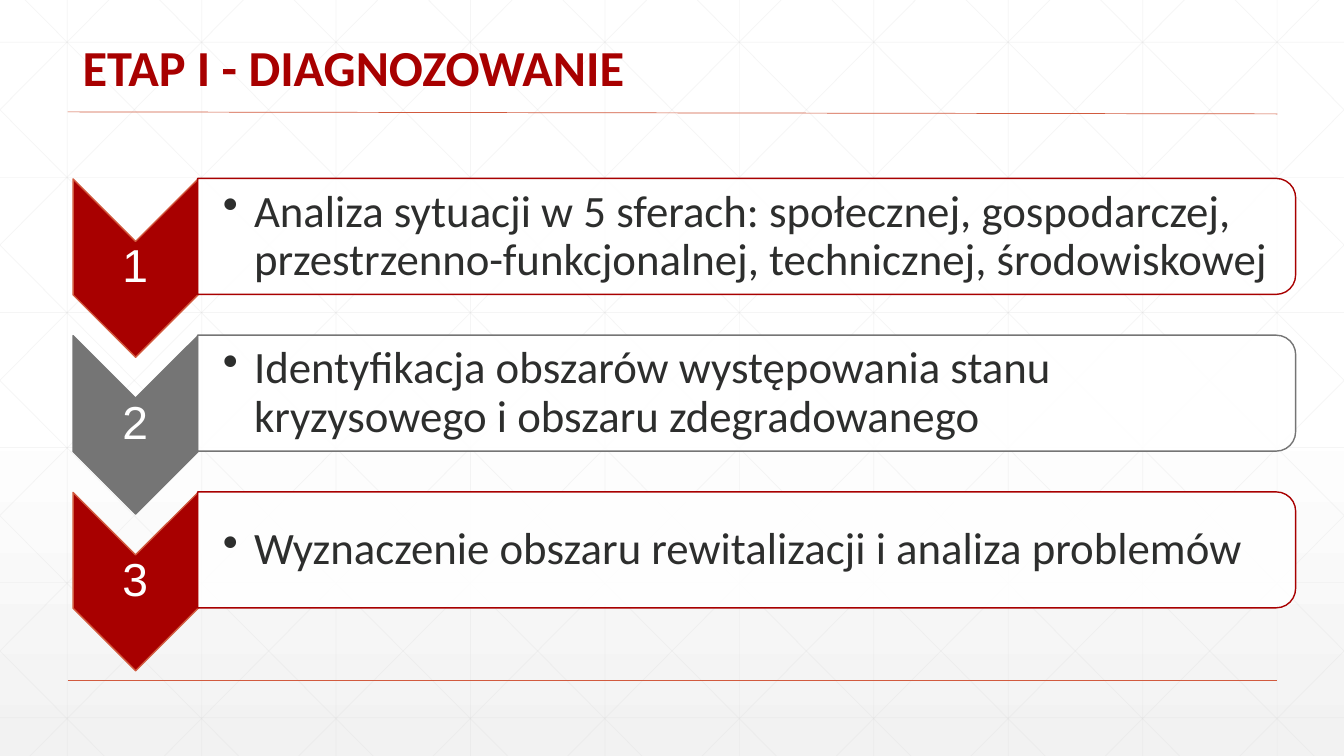
"""Build the slide on the diagnosis stage of a revitalisation programme."""
from dataclasses import dataclass

from lxml import etree
from pptx import Presentation
from pptx import util as u
from pptx.dml import color
from pptx.enum import shapes as kinds
from pptx.enum import text
from pptx.oxml import ns
from pptx.shapes import autoshape, shapetree
from pptx.slide import Slide

WIDTH, HEIGHT = 13.33, 7.5


@dataclass(frozen=True)
class Theme:
    red: str = "A80000"
    orange: str = "D15A3E"
    gray: str = "757575"
    grid: str = "D9D9D9"
    ink: str = "2D2E2D"
    white: str = "FFFFFF"
    shade: str = "F2F2F2"
    heading_font: str = "Calibri"
    number_font: str = "Arial"
    title_size: int = 36
    number_size: int = 33
    body_size: int = 32


@dataclass(frozen=True)
class Rule:
    start: tuple[float, float]
    end: tuple[float, float]
    color: str
    weight: float
    opacity: int = 100


@dataclass(frozen=True)
class Stage:
    number: str
    task: str
    color: str
    chevron_edge: str


THEME = Theme()
STAGES = (
    Stage("1", "Analiza sytuacji w 5 sferach: społecznej, gospodarczej, "
          "przestrzenno-funkcjonalnej, technicznej, środowiskowej", THEME.red, THEME.orange),
    Stage("2", "Identyfikacja obszarów występowania stanu kryzysowego "
          "i obszaru zdegradowanego", THEME.gray, THEME.gray),
    Stage("3", "Wyznaczenie obszaru rewitalizacji i analiza problemów", THEME.red, THEME.orange),
)
TITLE_RULES = (
    Rule((0.67, 6.75), (12.67, 6.75), THEME.orange, 1),
    Rule((0.67, 1.11), (12.67, 1.13), THEME.orange, 0.5),
)


def rgb(value: str) -> color.RGBColor:
    return color.RGBColor.from_string(value)


def set_opacity(element: etree.ElementBase, percent: int) -> None:
    first_color = element.find(".//" + ns.qn("a:srgbClr"))
    etree.SubElement(first_color, ns.qn("a:alpha")).set("val", str(percent * 1000))


def grid_rules() -> list[Rule]:
    step, run = 4 / 3, 7.45
    ends = [((step * (i + 0.5), 0), (step * (i + 0.5), HEIGHT)) for i in range(10)]
    ends += [((0, 0.42 + 1.34 * i), (WIDTH, 0.42 + 1.34 * i)) for i in range(6)]
    for i in range(-5, 10):
        top_x = 0.25 + step * i
        left, right = max(top_x, 0), min(top_x + run, WIDTH)
        upper, lower = [(x - top_x) * HEIGHT / run for x in (left, right)]
        ends.append(((left, upper), (right, lower)))
        ends.append(((WIDTH - left, upper), (WIDTH - right, lower)))
    return [Rule(start, end, THEME.grid, 0.5, 25) for start, end in ends]


def draw_rule(canvas: shapetree.GroupShapes, rule: Rule) -> None:
    points = [u.Inches(v) for v in (*rule.start, *rule.end)]
    line = canvas.add_connector(kinds.MSO_CONNECTOR.STRAIGHT, *points)
    line.line.color.rgb = rgb(rule.color)
    line.line.width = u.Pt(rule.weight)
    if rule.opacity < 100:
        set_opacity(line.element, rule.opacity)
    etree.SubElement(line.element.find(ns.qn("p:spPr")), ns.qn("a:effectLst"))


def draw_turned(canvas: shapetree.GroupShapes, kind: kinds.MSO_SHAPE,
                box: tuple[float, ...], fill: str, edge: str) -> autoshape.Shape:
    shape = canvas.add_shape(kind, *map(u.Inches, box))
    shape.rotation = 90
    shape.shadow.inherit = False
    shape.fill.solid()
    shape.fill.fore_color.rgb = rgb(fill)
    shape.line.color.rgb = rgb(edge)
    shape.line.width = u.Pt(1)
    return shape


def write(shape: autoshape.Shape, words: str, font: str, size: int, ink: str,
          align: text.PP_ALIGN, anchor: text.MSO_ANCHOR, bold: bool = False) -> None:
    frame = shape.text_frame
    frame.text = words
    frame.word_wrap = True
    frame.auto_size = text.MSO_AUTO_SIZE.NONE
    frame.vertical_anchor = anchor
    paragraph = frame.paragraphs[0]
    paragraph.alignment = align
    paragraph.line_spacing = 0.9
    style = paragraph.runs[0].font
    style.name, style.size, style.bold = font, u.Pt(size), bold
    style.color.rgb = rgb(ink)


def add_label(canvas: shapetree.GroupShapes, box: tuple[float, ...],
              left_inset: float) -> autoshape.Shape:
    label = canvas.add_textbox(*map(u.Inches, box))
    frame = label.text_frame
    frame.margin_top = frame.margin_right = frame.margin_bottom = u.Inches(0.02)
    frame.margin_left = u.Inches(left_inset)
    return label


def add_bullet(label: autoshape.Shape) -> None:
    properties = label.element.find(".//" + ns.qn("a:pPr"))
    indent = u.Inches(0.31)
    properties.set("marL", str(indent))
    properties.set("indent", str(-indent))
    etree.SubElement(properties, ns.qn("a:buChar")).set("char", "•")


def draw_stage(canvas: shapetree.GroupShapes, stage: Stage, top: float) -> None:
    draw_turned(canvas, kinds.MSO_SHAPE.CHEVRON, (0.46, top + 0.21, 1.77, 1.24),
                stage.color, stage.chevron_edge)
    number = add_label(canvas, (0.72, top + 0.56, 1.24, 0.53), 0.02)
    write(number, stage.number, THEME.number_font, THEME.number_size, THEME.white,
          text.PP_ALIGN.CENTER, text.MSO_ANCHOR.MIDDLE)
    panel = draw_turned(canvas, kinds.MSO_SHAPE.ROUND_2_SAME_RECTANGLE,
                        (6.83, top - 4.93, 1.15, 10.89), THEME.white, stage.color)
    set_opacity(panel.element, 90)
    task = add_label(canvas, (1.96, top, 10.83, 1.04), 0.25)
    write(task, stage.task, THEME.heading_font, THEME.body_size, THEME.ink,
          text.PP_ALIGN.LEFT, text.MSO_ANCHOR.MIDDLE)
    add_bullet(task)


def paint_background(slide: Slide) -> None:
    fill = slide.background.fill
    fill.gradient()
    fill.gradient_angle = 270
    for stop, place, tone in zip(fill.gradient_stops, (0.53, 1), (THEME.white, THEME.shade)):
        stop.position = place
        stop.color.rgb = rgb(tone)


def place_title(slide: Slide) -> None:
    title = slide.shapes.title
    title.left, title.top, title.width, title.height = map(u.Inches, (0.72, 0.37, 10.5, 0.65))
    write(title, "ETAP I - DIAGNOZOWANIE", THEME.heading_font, THEME.title_size, THEME.red,
          text.PP_ALIGN.LEFT, text.MSO_ANCHOR.BOTTOM, bold=True)
    title.element.getparent().append(title.element)


def main() -> None:
    deck = Presentation()
    deck.slide_width, deck.slide_height = u.Inches(WIDTH), u.Inches(HEIGHT)
    slide = deck.slides.add_slide(deck.slide_layouts[5])
    paint_background(slide)
    grid = slide.shapes.add_group_shape().shapes
    for rule in grid_rules():
        draw_rule(grid, rule)
    for rule in TITLE_RULES:
        draw_rule(slide.shapes, rule)
    place_title(slide)
    stages = slide.shapes.add_group_shape().shapes
    for row, stage in enumerate(STAGES):
        draw_stage(stages, stage, 1.83 + 1.555 * row)
    deck.save("out.pptx")


if __name__ == "__main__":
    main()
